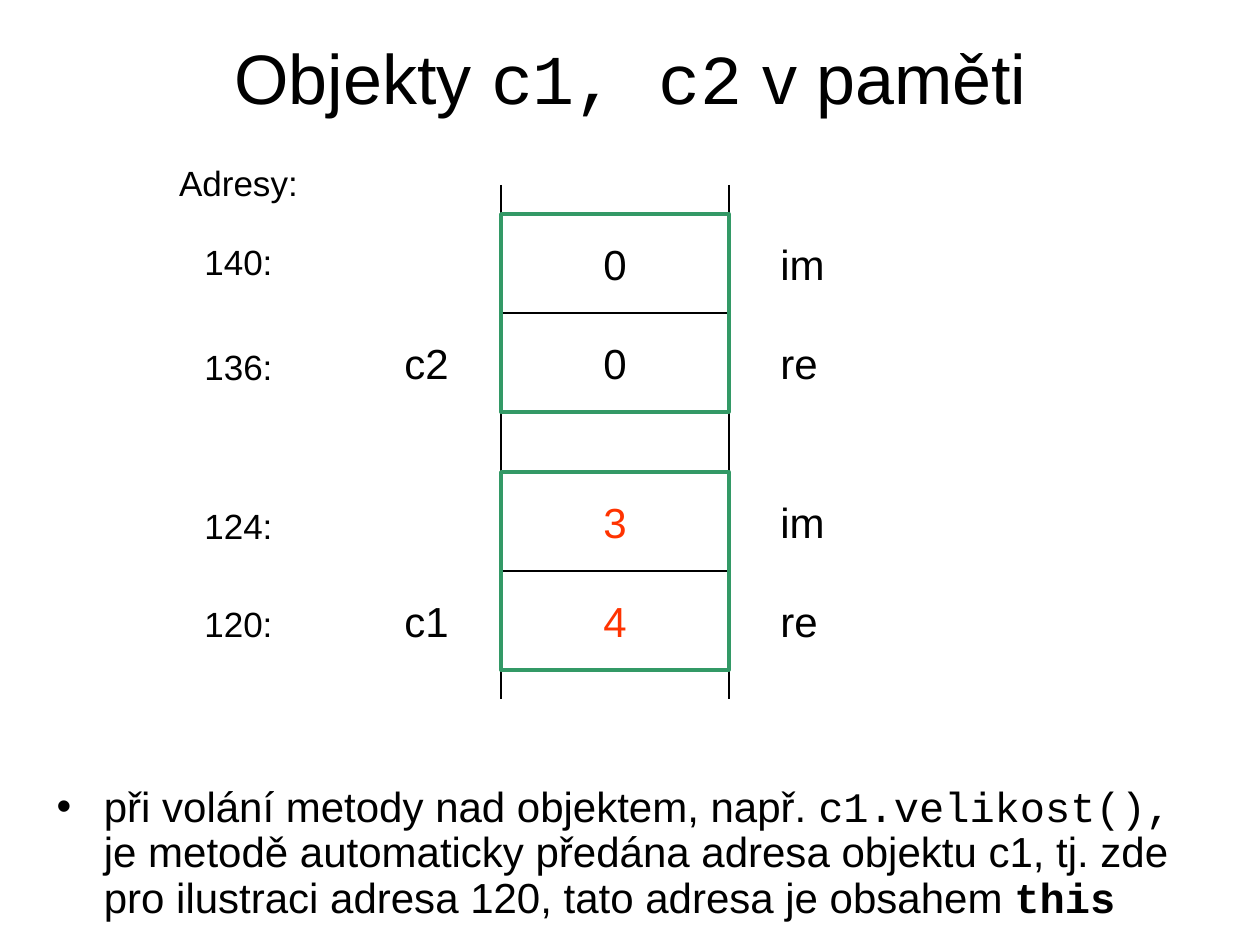
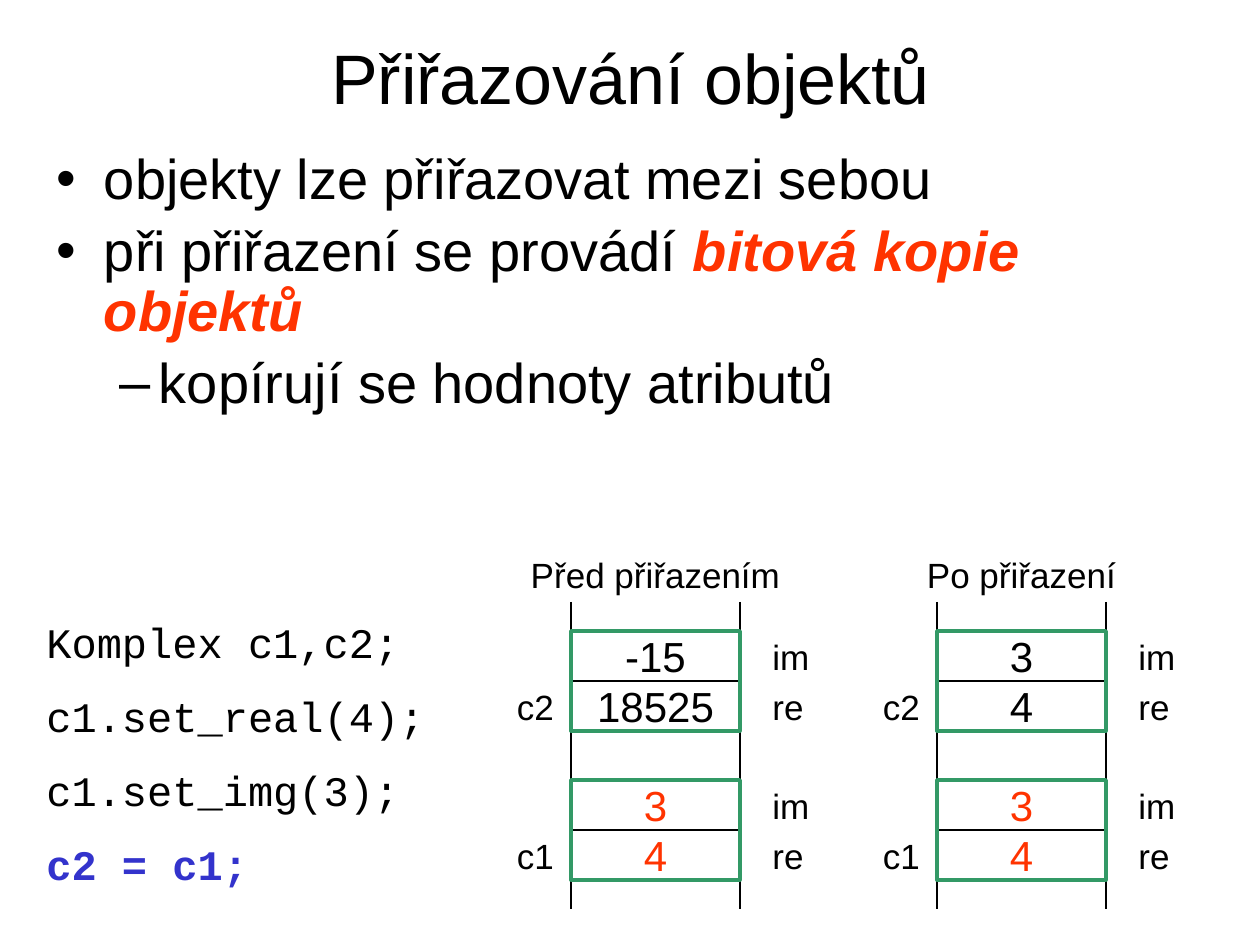
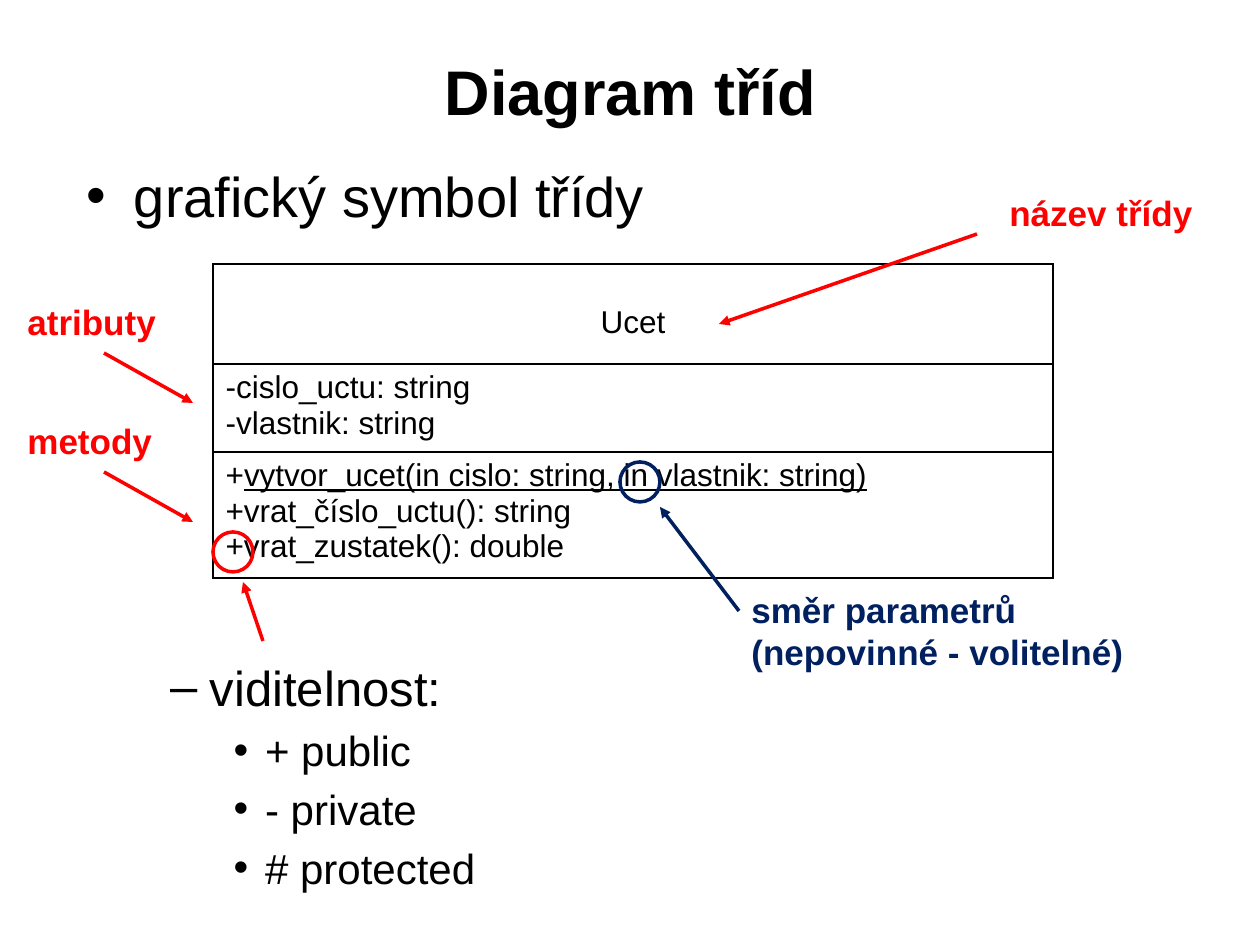
from dataclasses import dataclass
from typing import Optional

from lxml.etree import SubElement
from pptx import Presentation
from pptx.dml.color import RGBColor
from pptx.enum.shapes import MSO_CONNECTOR as Connector, MSO_SHAPE as Shape
from pptx.enum.text import MSO_ANCHOR as Anchor, MSO_AUTO_SIZE as AutoSize, PP_ALIGN as Align
from pptx.oxml.ns import qn
from pptx.util import Emu, Pt

EMU_PER_PX = 914400 / 126
SANS = "Arial"
MONO = "Courier New"
BLACK = "000000"
ORANGE = "FF3300"
GREEN = "339966"
BLUE = "3333CC"
RED = "FF0000"
NAVY = "002060"


def px(length):
    return Emu(round(length * EMU_PER_PX))


def rgb(value):
    return RGBColor.from_string(value)


@dataclass
class Span:
    text: str
    font: Optional[str] = None
    color: Optional[str] = None
    bold: Optional[bool] = None
    italic: Optional[bool] = None
    underline: Optional[bool] = None


def set_font(font, name=None, size=None, color=None, bold=None, italic=None, underline=None):
    if name:
        font.name = name
    if size:
        font.size = Pt(size)
    if color:
        font.color.rgb = rgb(color)
    font.bold = bold
    font.italic = italic
    font.underline = underline


def write_paragraph(paragraph, content, size, name=SANS, color=BLACK, bold=None, align=None):
    set_font(paragraph.font, name, size, color, bold)
    paragraph.alignment = align
    spans = [Span(content)] if isinstance(content, str) else content
    for span in spans:
        run = paragraph.add_run()
        run.text = span.text
        set_font(run.font, span.font, None, span.color, span.bold, span.italic, span.underline)


def write(frame, contents, size, **style):
    for index, content in enumerate(contents):
        paragraph = frame.add_paragraph() if index else frame.paragraphs[0]
        write_paragraph(paragraph, content, size, **style)


class Deck:
    def __init__(self, width, height):
        self.presentation = Presentation()
        self.presentation.slide_width = px(width)
        self.presentation.slide_height = px(height)
        self.slide = None

    def new_slide(self, title, layout=1, top=16, height=120, size=40, bold=None):
        layouts = self.presentation.slide_layouts
        self.slide = self.presentation.slides.add_slide(layouts[layout])
        frame = self.place(self.slide.shapes.title, 95, top, 1071, height)
        frame.vertical_anchor = Anchor.MIDDLE
        write(frame, [title], size, bold=bold, align=Align.CENTER)

    def place(self, shape, left, top, width, height):
        shape.left, shape.top = px(left), px(top)
        shape.width, shape.height = px(width), px(height)
        frame = shape.text_frame
        frame.auto_size = AutoSize.NONE
        frame.word_wrap = True
        return frame

    def bullets(self, left, top, width, height, items, index=1, spacing=None):
        frame = self.place(self.slide.placeholders[index], left, top, width, height)
        for number, (level, size, content) in enumerate(items):
            paragraph = frame.add_paragraph() if number else frame.paragraphs[0]
            paragraph.level = level
            paragraph.line_spacing = spacing
            write_paragraph(paragraph, content, size)

    def label(self, left, top, width, height, contents, size=20, gap=0, **style):
        shape = self.slide.shapes.add_textbox(px(left), px(top), px(width), px(height))
        shape.text_frame.word_wrap = True
        write(shape.text_frame, contents, size, **style)
        for paragraph in shape.text_frame.paragraphs[1:]:
            paragraph.space_before = Pt(gap)

    def outline(self, kind, left, top, width, height, color, weight):
        shape = self.slide.shapes.add_shape(kind, px(left), px(top), px(width), px(height))
        shape.shadow.inherit = False
        shape.fill.background()
        shape.line.color.rgb = rgb(color)
        shape.line.width = Pt(weight)
        return shape

    def value_cell(self, left, top, width, height, value, color):
        shape = self.outline(Shape.RECTANGLE, left, top, width, height, BLACK, 1)
        frame = shape.text_frame
        frame.word_wrap = False
        frame.vertical_anchor = Anchor.MIDDLE
        write(frame, [value], 24, color=color, align=Align.CENTER)

    def line(self, start, end, color=BLACK, weight=0.75, arrow=False):
        ends = [px(length) for length in (*start, *end)]
        connector = self.slide.shapes.add_connector(Connector.STRAIGHT, *ends)
        connector.line.color.rgb = rgb(color)
        connector.line.width = Pt(weight)
        if arrow:
            SubElement(connector.line._get_or_add_ln(), qn("a:tailEnd"), type="triangle")
        SubElement(connector._element.spPr, qn("a:effectLst"))

    def memory(self, left, top, width, row, gap, objects, size, name_shift, field_shift):
        label_height = 63 if size == 24 else 54
        block = 2 * row
        right = left + width
        tops = [top + index * (block + gap) for index in range(len(objects))]
        for block_top, (name, values, color) in zip(tops, objects):
            for index, (field, value) in enumerate(zip(("im", "re"), values)):
                cell_top = block_top + index * row
                label_top = cell_top + (row - label_height) // 2
                self.value_cell(left, cell_top, width, row, value, color)
                self.label(right + field_shift, label_top, 89, label_height, [field], size)
            self.label(left - name_shift, label_top, 89, label_height, [name], size,
                       align=Align.CENTER)
        for rail in (left, right):
            self.line((rail, top - 29), (rail, tops[-1] + block + 29))
        for block_top in tops:
            self.outline(Shape.RECTANGLE, left, block_top, width, block, GREEN, 2)

    def class_table(self, left, top, width, heights, sections):
        graphic = self.slide.shapes.add_table(len(heights), 1, px(left), px(top),
                                              px(width), px(sum(heights)))
        table = graphic.table
        table.first_row = table.horz_banding = False
        for index, (height, section) in enumerate(zip(heights, sections)):
            table.rows[index].height = px(height)
            cell = table.cell(index, 0)
            self.borders(cell)
            cell.fill.background()
            write(cell.text_frame, section, 18, align=None if index else Align.CENTER)
        table.cell(0, 0).margin_top = px(41)

    def borders(self, cell):
        properties = cell._tc.get_or_add_tcPr()
        for side in ("lnL", "lnR", "lnT", "lnB"):
            border = SubElement(properties, qn(f"a:{side}"), w=str(Pt(1)))
            fill = SubElement(border, qn("a:solidFill"))
            SubElement(fill, qn("a:srgbClr"), val=BLACK)


def memory_slide(deck):
    deck.new_slide([Span("Objekty "), Span("c1, c2", MONO), Span(" v paměti")])
    deck.bullets(44, 780, 1171, 149, [(0, 24, [
        Span("při volání metody nad objektem, např. "),
        Span("c1.velikost(),", MONO),
        Span(" je metodě automaticky předána adresa objektu c1, tj. zde pro ilustraci "
             "adresa 120, tato adresa je obsahem "),
        Span("this", MONO, bold=True),
    ])], spacing=0.9)
    objects = [("c2", ("0", "0"), BLACK), ("c1", ("3", "4"), ORANGE)]
    deck.memory(501, 214, 228, 99, 60, objects, 24, 119, 39)
    deck.label(164, 155, 149, 54, ["Adresy:"], align=Align.CENTER)
    for address, top in (("140:", 234), ("136:", 339), ("124:", 498), ("120:", 596)):
        deck.label(174, top, 129, 54, [address], align=Align.CENTER)


def assignment_slide(deck):
    deck.new_slide("Přiřazování objektů")
    deck.bullets(44, 145, 1171, 287, [
        (0, 32, "objekty lze přiřazovat mezi sebou"),
        (0, 32, [Span("při přiřazení se provádí "),
                 Span("bitová kopie objektů", color=ORANGE, bold=True, italic=True)]),
        (1, 32, "kopírují se hodnoty atributů"),
    ], spacing=0.9)
    source = ("c1", ("3", "4"), ORANGE)
    states = [(571, "Před přiřazením", ("-15", "18525")), (937, "Po přiřazení", ("3", "4"))]
    for left, caption, values in states:
        deck.memory(left, 631, 169, 50, 49, [("c2", values, BLACK), source], 20, 80, 20)
        deck.label(left - 59, 547, 287, 54, [caption], align=Align.CENTER)
    deck.label(34, 610, 417, 292, [
        "Komplex c1,c2;",
        "c1.set_real(4);",
        "c1.set_img(3);",
        [Span("c2 = c1;", color=BLUE, bold=True)],
    ], 24, gap=13.6, name=MONO)


def class_slide(deck):
    deck.new_slide("Diagram tříd", layout=3, top=45, height=91, size=36, bold=True)
    deck.bullets(74, 155, 1071, 84, [(0, 32, "grafický symbol třídy")])
    access = [(2, 24, text) for text in ("+ public", "- private", "# protected")]
    deck.bullets(95, 651, 1071, 268, [(1, 28, "viditelnost:"), *access], index=2)
    deck.class_table(213, 264, 840, (100, 88, 126), [
        ["Ucet"],
        ["-cislo_uctu: string", "-vlastnik: string"],
        [[Span("+"),
          Span("vytvor_ucet(in cislo: string, in vlastnik: string)", underline=True)],
         "+vrat_číslo_uctu(): string",
         "+vrat_zustatek(): double"],
    ])
    for text, left, top, width in (("atributy", 15, 294, 160), ("metody", 15, 413, 160),
                                   ("název třídy", 997, 185, 215)):
        deck.label(left, top, width, 55, [text], color=RED, bold=True)
    deck.label(739, 582, 446, 97, ["směr parametrů", "(nepovinné - volitelné)"],
               color=NAVY, bold=True)
    for left, top, color in ((213, 532, RED), (620, 462, NAVY)):
        deck.outline(Shape.OVAL, left, top, 40, 40, color, 2)
    for start, end, color in (((104, 353), (193, 403), RED), ((104, 472), (193, 522), RED),
                              ((977, 234), (719, 324), RED), ((263, 641), (243, 582), RED),
                              ((739, 611), (660, 507), NAVY)):
        deck.line(start, end, color, 2, arrow=True)


def main():
    deck = Deck(1260, 945)
    memory_slide(deck)
    assignment_slide(deck)
    class_slide(deck)
    deck.presentation.save("out.pptx")


if __name__ == "__main__":
    main()
